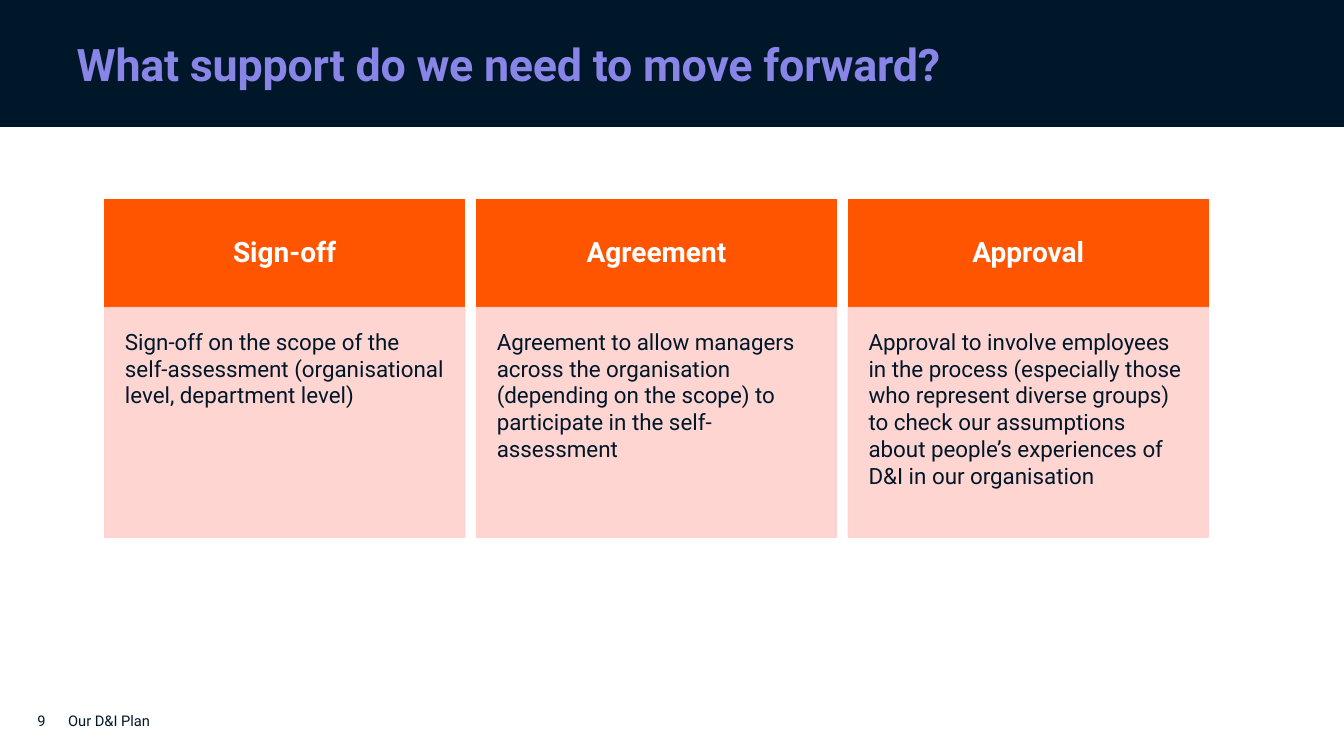
from lxml.etree import SubElement
from pptx import Presentation
from pptx.dml.color import RGBColor
from pptx.enum.shapes import MSO_SHAPE
from pptx.enum.text import MSO_ANCHOR, PP_ALIGN
from pptx.oxml.ns import qn
from pptx.util import Cm, Pt

# Content
HEADLINE = "What support do we need to move forward?"
REQUESTS = [
    ("Sign-off",
     "Sign-off on the scope of the self-assessment (organisational level, "
     "department level)"),
    ("Agreement",
     "Agreement to allow managers across the organisation (depending on the "
     "scope) to participate in the self-assessment"),
    ("Approval",
     "Approval to involve employees in the process (especially those who "
     "represent diverse groups) to check our assumptions about people’s "
     "experiences of D&I in our organisation"),
]
FOOTER = "Our D&I Plan"
PAGE_NUMBER = "9"

# Style
FONT = "Roboto"
NAVY, VIOLET, ORANGE, PINK, WHITE = "00172A", "8885E7", "FF5400", "FFD1CC", "FFFFFF"

# Column layout in cm
COLUMN_LEFT, COLUMN_WIDTH, COLUMN_STEP = 2.64, 9.07, 9.37
HEADING_TOP, HEADING_HEIGHT, DETAIL_HEIGHT = 5.03, 2.72, 5.79


def rgb(hex_color):
    return RGBColor.from_string(hex_color)


def add_block(left, top, width, height, color, opacity=100):
    block = slide.shapes.add_shape(
        MSO_SHAPE.RECTANGLE, Cm(left), Cm(top), Cm(width), Cm(height))
    block.shadow.inherit = False
    block.fill.solid()
    block.fill.fore_color.rgb = rgb(color)
    block.line.color.rgb = rgb(color)
    block.line.width = Pt(1)
    if opacity < 100:
        for tint in block._element.spPr.iter(qn("a:srgbClr")):
            SubElement(tint, qn("a:alpha"), val=str(opacity * 1000))
    return block


def add_label(left, top, width, height):
    return slide.shapes.add_textbox(Cm(left), Cm(top), Cm(width), Cm(height))


def write(holder, text, size, color, bold=False, align=PP_ALIGN.LEFT,
          anchor=MSO_ANCHOR.MIDDLE, inset=None):
    frame = holder.text_frame
    frame.word_wrap = True
    frame.vertical_anchor = anchor
    if inset is not None:
        frame.margin_left = frame.margin_right = Cm(inset)
        frame.margin_top = frame.margin_bottom = Cm(inset)
    paragraph = frame.paragraphs[0]
    paragraph.alignment = align
    run = paragraph.add_run()
    run.text = text
    run.font.name = FONT
    run.font.size = Pt(size)
    run.font.bold = bold
    run.font.color.rgb = rgb(color)
    return paragraph


deck = Presentation()
deck.slide_width, deck.slide_height = Cm(33.87), Cm(19.05)
slide = deck.slides.add_slide(deck.slide_layouts[6])

# Title band
band = add_block(0, 0, 33.87, 3.2, NAVY)
band.line.fill.background()
title = write(add_label(1.68, 0.53, 26.16, 2.13), HEADLINE, 32, VIOLET, bold=True)
title.runs[0].font._element.set("spc", "-20")

# Request columns
for column, (heading, detail) in enumerate(REQUESTS):
    left = COLUMN_LEFT + column * COLUMN_STEP
    heading_block = add_block(left, HEADING_TOP, COLUMN_WIDTH, HEADING_HEIGHT, ORANGE)
    heading_line = write(heading_block, heading, 20, WHITE, bold=True,
                         align=PP_ALIGN.CENTER, inset=0.71)
    heading_line.line_spacing = 0.9
    detail_block = add_block(left, HEADING_TOP + HEADING_HEIGHT,
                             COLUMN_WIDTH, DETAIL_HEIGHT, PINK, opacity=90)
    write(detail_block, detail, 16, NAVY, anchor=MSO_ANCHOR.TOP, inset=0.51)

# Footer
write(add_label(1.47, 17.65, 8.41, 1.02), FOOTER, 10.5, NAVY)
write(add_label(0.13, 17.65, 1.27, 1.02), PAGE_NUMBER, 10.5, NAVY, align=PP_ALIGN.RIGHT)

deck.save("out.pptx")
